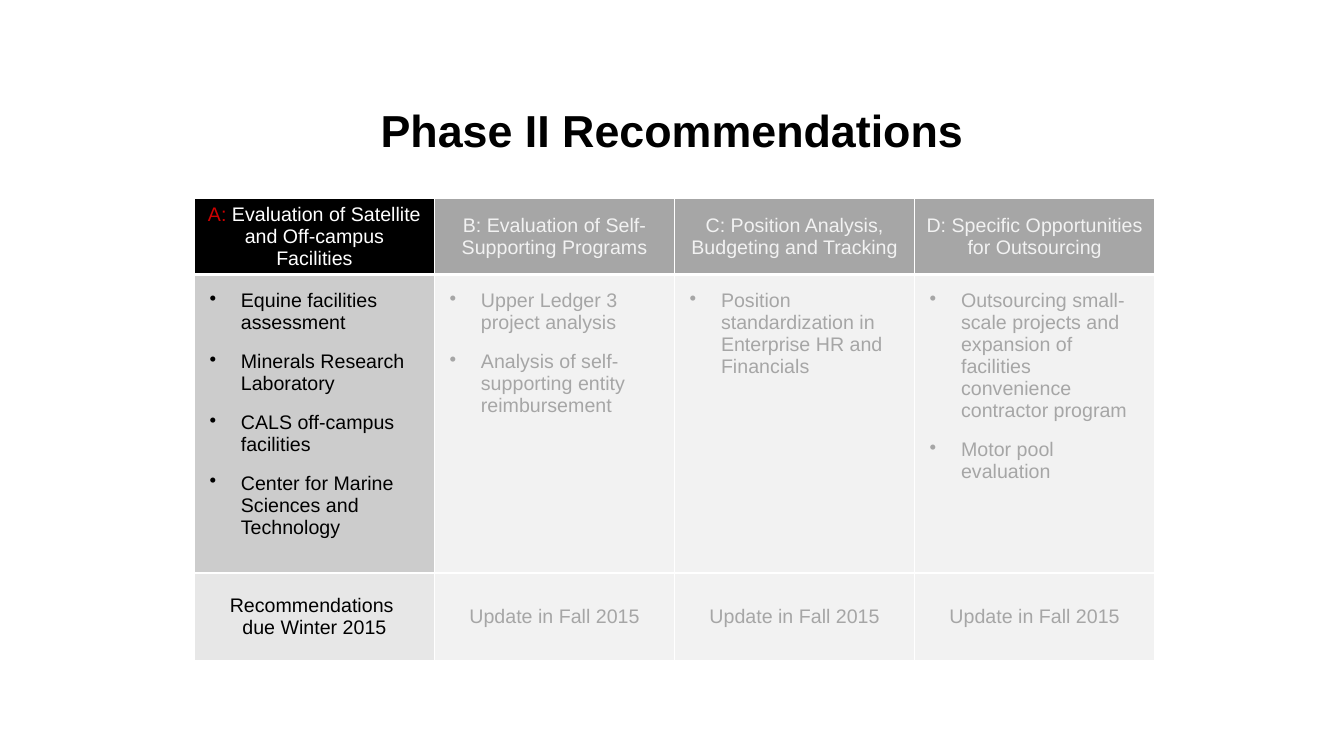
import pptx
import pptx.dml.color
import pptx.enum.text
import pptx.oxml
import pptx.oxml.ns
import pptx.util
from dataclasses import dataclass

Cm, Pt = pptx.util.Cm, pptx.util.Pt
PP_ALIGN = pptx.enum.text.PP_ALIGN
MIDDLE = pptx.enum.text.MSO_ANCHOR.MIDDLE
TOP = pptx.enum.text.MSO_ANCHOR.TOP


@dataclass(frozen=True)
class Theme:
    font: str = "Arial"
    title_size: int = 32
    text_size: int = 14
    ink: str = "000000"
    paper: str = "FFFFFF"
    accent: str = "CC0000"
    muted: str = "A6A6A6"
    pale: str = "F2F2F2"
    active_list: str = "CCCCCC"
    active_due: str = "E7E7E7"


PHASES = [
    ("A:", " Evaluation of Satellite and Off-campus Facilities",
     ["Equine facilities assessment", "Minerals Research Laboratory",
      "CALS off-campus facilities", "Center for Marine Sciences and Technology"],
     "Recommendations \ndue Winter 2015"),
    ("B:", " Evaluation of Self-Supporting Programs",
     ["Upper Ledger 3 project analysis",
      "Analysis of self-supporting entity reimbursement"],
     "Update in Fall 2015"),
    ("C:", " Position Analysis, Budgeting and Tracking",
     ["Position standardization in Enterprise HR and Financials"],
     "Update in Fall 2015"),
    ("D:", " Specific Opportunities for Outsourcing",
     ["Outsourcing small-scale projects and expansion of facilities "
      "convenience contractor program", "Motor pool evaluation"],
     "Update in Fall 2015"),
]


class RecommendationSlide:
    def __init__(self, deck, theme):
        self.theme = theme
        self.slide = deck.slides.add_slide(deck.slide_layouts[5])

    def style(self, font, color, size=None, bold=False):
        font.name = self.theme.font
        font.size = Pt(size or self.theme.text_size)
        font.bold = bold
        font.color.rgb = pptx.dml.color.RGBColor.from_string(color)

    def title(self, text, left, top, width, height):
        heading = self.slide.shapes.title
        heading.left, heading.top, heading.width, heading.height = left, top, width, height
        heading.text_frame.text = text
        heading.text_frame.vertical_anchor = MIDDLE
        paragraph = heading.text_frame.paragraphs[0]
        paragraph.alignment = PP_ALIGN.CENTER
        self.style(paragraph.font, self.theme.ink, self.theme.title_size, bold=True)

    def table(self, left, top, column_width, row_heights, columns):
        table = self.slide.shapes.add_table(
            len(row_heights), columns, left, top,
            column_width * columns, sum(row_heights)).table
        table.horz_banding = False
        for column in table.columns:
            column.width = column_width
        for row, height in zip(table.rows, row_heights):
            row.height = height
        return table

    def paint(self, cell, color, anchor):
        cell.fill.solid()
        cell.fill.fore_color.rgb = pptx.dml.color.RGBColor.from_string(color)
        cell.vertical_anchor = anchor

    def border(self, cell, side, width):
        cell._tc.get_or_add_tcPr().append(pptx.oxml.parse_xml(
            f'<a:ln{side} {pptx.oxml.ns.nsdecls("a")} w="{Pt(width)}"><a:solidFill>'
            f'<a:srgbClr val="{self.theme.paper}"/></a:solidFill></a:ln{side}>'))

    def header_cell(self, cell, letter, name, active):
        for side, width in (("L", 1), ("R", 1), ("T", 1), ("B", 3)):
            self.border(cell, side, width)
        self.paint(cell, self.theme.ink if active else self.theme.muted, MIDDLE)
        paragraph = cell.text_frame.paragraphs[0]
        paragraph.alignment = PP_ALIGN.CENTER
        if active:
            for text, color in ((letter, self.theme.accent), (name, self.theme.paper)):
                run = paragraph.add_run()
                run.text = text
                self.style(run.font, color)
        else:
            paragraph.text = letter + name
            self.style(paragraph.font, self.theme.pale)

    def list_cell(self, cell, items, active):
        self.paint(cell, self.theme.active_list if active else self.theme.pale, TOP)
        cell.margin_left = cell.margin_right = Cm(0.38)
        cell.margin_top = cell.margin_bottom = Cm(0.38)
        frame = cell.text_frame
        for index, item in enumerate(items):
            paragraph = frame.add_paragraph() if index else frame.paragraphs[0]
            paragraph.text = item
            properties = paragraph._p.get_or_add_pPr()
            properties.set("marL", str(Cm(0.79)))
            properties.set("indent", str(-Cm(0.79)))
            properties.append(pptx.oxml.parse_xml(
                f'<a:buChar {pptx.oxml.ns.nsdecls("a")} char="•"/>'))
            paragraph.space_after = Pt(12)
            self.style(paragraph.font, self.theme.ink if active else self.theme.muted)

    def due_cell(self, cell, text, active):
        self.paint(cell, self.theme.active_due if active else self.theme.pale, MIDDLE)
        paragraph = cell.text_frame.paragraphs[0]
        paragraph.text = text
        paragraph.alignment = PP_ALIGN.CENTER
        paragraph.space_after = Pt(12)
        self.style(paragraph.font, self.theme.ink if active else self.theme.muted)


def main():
    deck = pptx.Presentation()
    deck.slide_width, deck.slide_height = Cm(33.87), Cm(19.05)
    page = RecommendationSlide(deck, Theme())
    page.title("Phase II Recommendations", Cm(4.24), Cm(1.85), Cm(25.4), Cm(2.84))
    table = page.table(Cm(4.9), Cm(5), Cm(6.05), [Cm(1.73), Cm(7.52), Cm(2.21)], len(PHASES))
    for column, (letter, name, items, due) in enumerate(PHASES):
        active = column == 0
        page.header_cell(table.cell(0, column), letter, name, active)
        page.list_cell(table.cell(1, column), items, active)
        page.due_cell(table.cell(2, column), due, active)
    deck.save("out.pptx")


if __name__ == "__main__":
    main()
